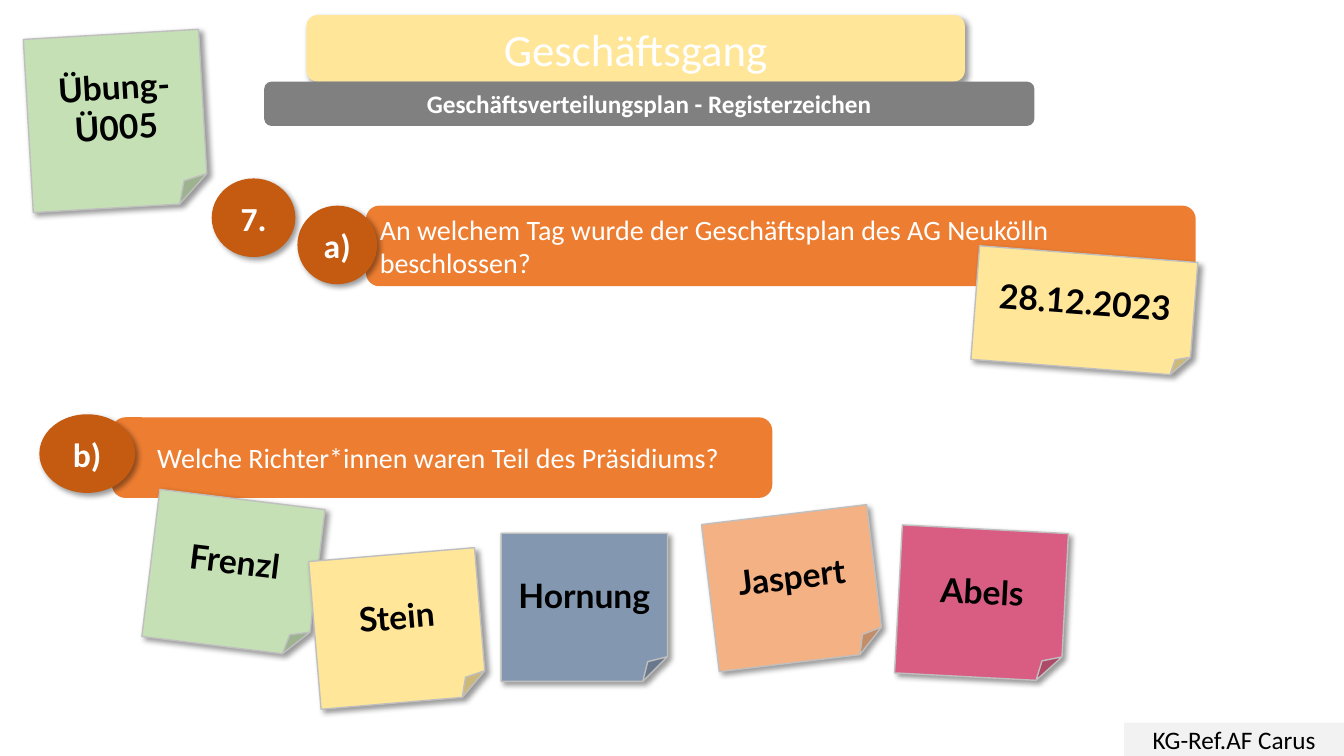
from dataclasses import dataclass

from lxml import etree
from pptx import Presentation
from pptx.dml.color import RGBColor
from pptx.enum import shapes, text
from pptx.util import Inches, Pt


@dataclass(frozen=True)
class Theme:
    white: str = "FFFFFF"
    black: str = "000000"
    light_gray: str = "F2F2F2"
    gray: str = "808080"
    note_edge: str = "BFBFBF"
    orange: str = "ED7D31"
    rust: str = "C55A11"
    yellow: str = "FFE699"
    green: str = "C5E0B4"
    blue: str = "8497B0"
    peach: str = "F4B183"
    pink: str = "D95D83"
    body_font: str = "Calibri"
    note_font: str = "Lato"
    title_size: int = 32
    label_size: int = 24
    question_size: int = 20
    small_size: int = 18


theme = Theme()
SHADOW = (
    '<a:effectLst xmlns:a="http://schemas.openxmlformats.org/drawingml/2006/main">'
    '<a:outerShdw blurRad="50800" dist="38100" dir="2700000" algn="tl" rotWithShape="0">'
    '<a:srgbClr val="000000"><a:alpha val="40000"/></a:srgbClr>'
    "</a:outerShdw></a:effectLst>"
)


def write(shape, content, size, color=theme.white, bold=False,
          font=theme.body_font, align=text.PP_ALIGN.CENTER):
    frame = shape.text_frame
    frame.text = content
    frame.word_wrap = True
    frame.vertical_anchor = text.MSO_ANCHOR.MIDDLE
    for paragraph in frame.paragraphs:
        paragraph.alignment = align
        paragraph.font.name = font
        paragraph.font.size = Pt(size)
        paragraph.font.bold = bold
        paragraph.font.color.rgb = RGBColor.from_string(color)


def add_box(parent, kind, place, fill, shadow=False):
    shape = parent.shapes.add_shape(kind, *map(Inches, place))
    shape.fill.solid()
    shape.fill.fore_color.rgb = RGBColor.from_string(fill)
    shape.line.fill.background()
    shape.shadow.inherit = False
    if shadow:
        properties = shape._element.spPr
        properties.replace(properties.effectLst, etree.fromstring(SHADOW))
    return shape


presentation = Presentation()
presentation.slide_width = Inches(13.33)
presentation.slide_height = Inches(7.5)
slide = presentation.slides.add_slide(presentation.slide_layouts[5])
kinds = shapes.MSO_SHAPE

# Footer
footer = add_box(slide, kinds.RECTANGLE, (11.15, 7.17, 2.18, 0.33), theme.light_gray)
write(footer, "KG-Ref.AF Carus", theme.small_size, theme.black)

# Title in front of its banner
banner_place = (3.04, 0.15, 6.53, 0.66)
banner = add_box(slide, kinds.ROUNDED_RECTANGLE, banner_place, theme.yellow, shadow=True)
title = slide.shapes.title
title.left, title.top, title.width, title.height = map(Inches, banner_place)
write(title, "Geschäftsgang", theme.title_size)
banner._element.addnext(title._element)

# Subtitle
subtitle = add_box(slide, kinds.ROUNDED_RECTANGLE, (2.62, 0.81, 7.64, 0.44), theme.gray)
write(subtitle, "Geschäftsverteilungsplan - Registerzeichen", theme.small_size, bold=True)

# Questions: bar place, left inset, wording, badge place, badge label
questions = [
    ((3.63, 2.04, 8.23, 0.8), 0.1,
     "An welchem Tag wurde der Geschäftsplan des AG Neukölln beschlossen?",
     (2.95, 2.04, 0.79, 0.78), "a)"),
    ((1.11, 4.14, 6.55, 0.8), 0.41,
     "Welche Richter*innen waren Teil des Präsidiums?",
     (0.39, 4.11, 0.95, 0.78), "b)"),
]
badges = [(slide, (2.1, 1.77, 0.83, 0.78), "7.")]
for bar_place, inset, wording, badge_place, label in questions:
    group = slide.shapes.add_group_shape()
    bar = add_box(group, kinds.ROUNDED_RECTANGLE, bar_place, theme.orange)
    write(bar, wording, theme.question_size, align=text.PP_ALIGN.LEFT)
    bar.text_frame.margin_left = Inches(inset)
    badges.append((group, badge_place, label))

# Round badges
for parent, place, label in badges:
    badge = add_box(parent, kinds.FLOWCHART_CONNECTOR, place, theme.rust, shadow=True)
    write(badge, label, theme.label_size, bold=True)

# Sticky notes: wording, place, rotation, fill
name_size = (1.65, 1.47)
notes = [
    ("Übung-\nÜ005", (0.28, 0.34, 1.74, 1.72), -3.3, theme.green),
    ("28.12.2023", (9.67, 2.52, 2.17, 1.13), 4.4, theme.yellow),
    ("Frenzl", (1.49, 4.95, *name_size), 7, theme.green),
    ("Stein", (3.12, 5.5, *name_size), -4.8, theme.yellow),
    ("Hornung", (4.97, 5.29, *name_size), 0, theme.blue),
    ("Jaspert", (7.04, 5.1, *name_size), -6.9, theme.peach),
    ("Abels", (8.91, 5.25, *name_size), 3, theme.pink),
]
for wording, place, rotation, fill in notes:
    note = add_box(slide, kinds.FOLDED_CORNER, place, fill, shadow=True)
    note.rotation = rotation
    note.line.color.rgb = RGBColor.from_string(theme.note_edge)
    note.line.width = Pt(1)
    write(note, wording, theme.label_size, theme.black, True, theme.note_font)

presentation.save("out.pptx")
